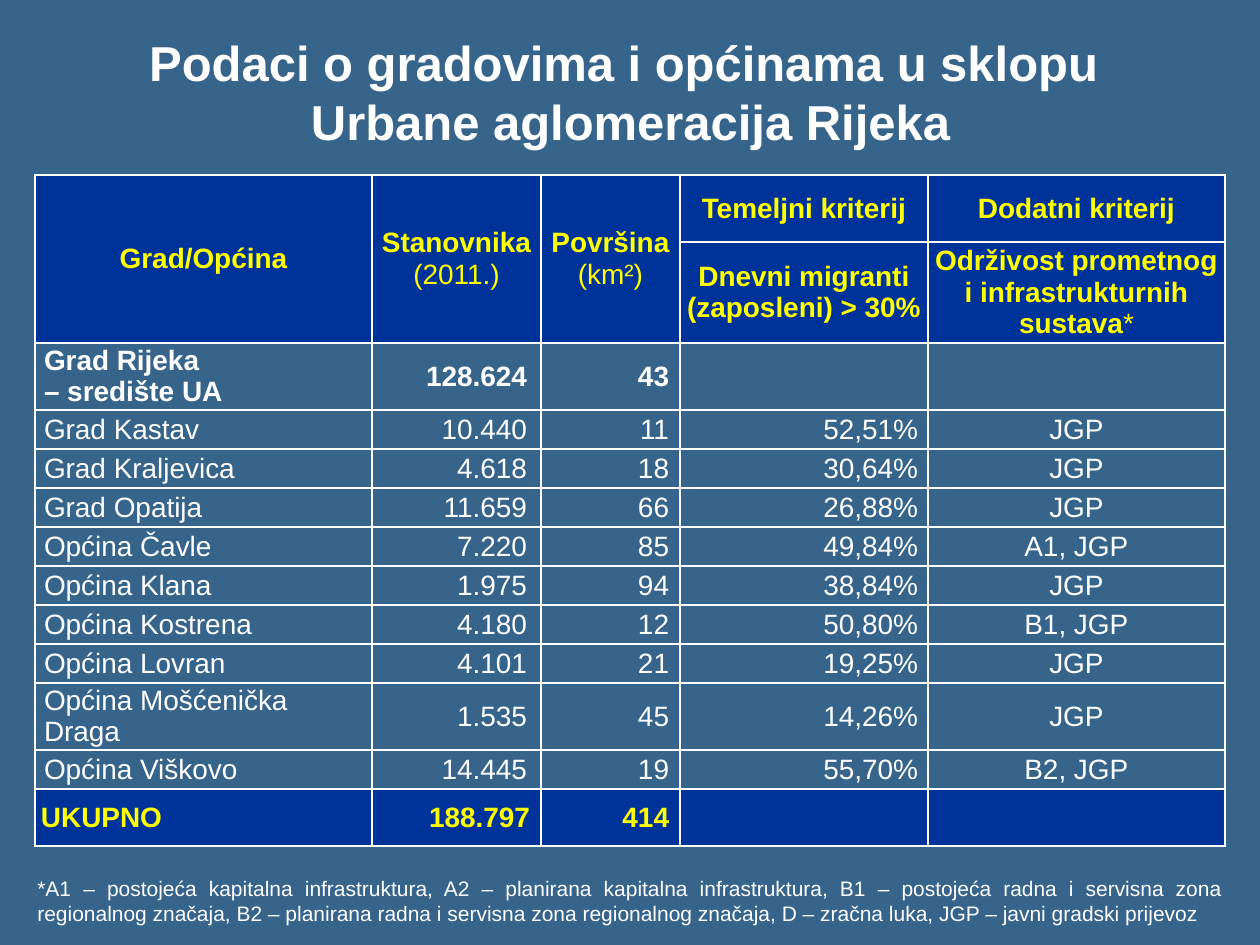
from lxml import etree
from pptx import Presentation
from pptx.dml.color import RGBColor
from pptx.enum.text import MSO_ANCHOR, MSO_AUTO_SIZE, PP_ALIGN
from pptx.oxml.ns import qn
from pptx.util import Pt

EMU_PER_PX = 914400 / 126
FONT = "Arial"
LEFT, CENTER, RIGHT = PP_ALIGN.LEFT, PP_ALIGN.CENTER, PP_ALIGN.RIGHT
JUSTIFY = PP_ALIGN.JUSTIFY
TOP, MIDDLE = MSO_ANCHOR.TOP, MSO_ANCHOR.MIDDLE
NO_AUTOFIT = MSO_AUTO_SIZE.NONE

SLATE = RGBColor(0x36, 0x64, 0x8B)
NAVY = RGBColor(0x00, 0x33, 0x99)
YELLOW = RGBColor(0xFF, 0xFF, 0x00)
WHITE = RGBColor(0xFF, 0xFF, 0xFF)

COLUMNS = [337, 169, 139, 248, 297]
ROWS = [67, 92] + [39] * 10 + [57]
ALIGNS = [LEFT, RIGHT, RIGHT, RIGHT, CENTER]
BODY_INSETS = [(9, 9), (5, 14), (5, 11), (0, 10), (5, 5)]
TOTAL_INSETS = [(6, 0), (5, 11), (5, 11), (0, 0), (0, 0)]

HEADERS = {
    (0, 0): [[("Grad/Općina", True)]],
    (0, 1): [[("Stanovnika", True)], [("(2011.)", False)]],
    (0, 2): [[("Površina", True)], [("(km²)", False)]],
    (0, 3): [[("Temeljni kriterij", True)]],
    (0, 4): [[("Dodatni kriterij", True)]],
    (1, 3): [[("Dnevni migranti (zaposleni) > 30%", True)]],
    (1, 4): [[("Održivost prometnog i infrastrukturnih sustava", True), ("*", False)]],
}
CENTRE_CITY = ("Grad Rijeka\n– središte UA", "128.624", "43", "", "")
MUNICIPALITIES = [
    ("Grad Kastav", "10.440", "11", "52,51%", "JGP"),
    ("Grad Kraljevica", "4.618", "18", "30,64%", "JGP"),
    ("Grad Opatija", "11.659", "66", "26,88%", "JGP"),
    ("Općina Čavle", "7.220", "85", "49,84%", "A1, JGP"),
    ("Općina Klana", "1.975", "94", "38,84%", "JGP"),
    ("Općina Kostrena", "4.180", "12", "50,80%", "B1, JGP"),
    ("Općina Lovran", "4.101", "21", "19,25%", "JGP"),
    ("Općina Mošćenička Draga", "1.535", "45", "14,26%", "JGP"),
    ("Općina Viškovo", "14.445", "19", "55,70%", "B2, JGP"),
]
TOTAL = ("UKUPNO", "188.797", "414", "", "")
TITLE = ["Podaci o gradovima i općinama u sklopu ", "Urbane aglomeracija Rijeka"]
FOOTNOTE = (
    "*A1 – postojeća kapitalna infrastruktura, A2 – planirana kapitalna infrastruktura, "
    "B1 – postojeća radna i servisna zona regionalnog značaja, B2 – planirana radna i "
    "servisna zona regionalnog značaja, D – zračna luka, JGP – javni gradski prijevoz"
)


def px(n):
    """Turn pixels into EMU."""
    return round(n * EMU_PER_PX)


def write(tf, paragraphs, size, color, align):
    """Write paragraphs, each a list of (text, bold) runs."""
    for i, runs in enumerate(paragraphs):
        p = tf.add_paragraph() if i else tf.paragraphs[0]
        p.alignment = align
        p.font.size = Pt(size)
        for text, bold in runs:
            for j, line in enumerate(text.split("\n")):
                if j:
                    p.add_line_break()
                r = p.add_run()
                r.text = line
                r.font.name = FONT
                r.font.size = Pt(size)
                r.font.bold = bold
                r.font.color.rgb = color


def add_title(s):
    """Fill the title placeholder."""
    sp = s.shapes.title
    sp.left, sp.top, sp.width, sp.height = map(px, (20, 26, 1221, 131))
    tf = sp.text_frame
    tf.word_wrap = True
    tf.auto_size = NO_AUTOFIT
    tf.vertical_anchor = TOP
    write(tf, [[(line, True)] for line in TITLE], 28, WHITE, CENTER)


def add_footnote(s):
    """Add the key to the abbreviations."""
    tf = s.shapes.add_textbox(*map(px, (25, 869, 1211, 63))).text_frame
    tf.word_wrap = True
    tf.vertical_anchor = MIDDLE
    write(tf, [[(FOOTNOTE, False)]], 12, WHITE, JUSTIFY)


def add_borders(cell):
    """Give a cell white lines on all four sides."""
    tcPr = cell._tc.get_or_add_tcPr()
    for side in ("a:lnL", "a:lnR", "a:lnT", "a:lnB"):
        ln = etree.SubElement(tcPr, qn(side), w=str(Pt(1)))
        fill = etree.SubElement(ln, qn("a:solidFill"))
        etree.SubElement(fill, qn("a:srgbClr"), val=str(WHITE))


def format_cell(cell, fill=None, insets=(0, 0)):
    """Set the borders, fill, side insets and anchor of a cell."""
    add_borders(cell)
    if fill is None:
        cell.fill.background()
    else:
        cell.fill.solid()
        cell.fill.fore_color.rgb = fill
    cell.margin_left, cell.margin_right = map(px, insets)
    cell.margin_top = cell.margin_bottom = 0
    cell.vertical_anchor = MIDDLE


def fill_row(table, row, values, insets, color=WHITE, bold=False, fill=None):
    """Write one row of data."""
    for col, value in enumerate(values):
        cell = table.cell(row, col)
        format_cell(cell, fill, insets[col])
        if value:
            write(cell.text_frame, [[(value, bold)]], 16, color, ALIGNS[col])


def add_data_table(s):
    """Add the table of towns and municipalities."""
    box = map(px, (35, 175, sum(COLUMNS), sum(ROWS)))
    table = s.shapes.add_table(len(ROWS), len(COLUMNS), *box).table
    table.first_row = table.horz_banding = False
    for column, width in zip(table.columns, COLUMNS):
        column.width = px(width)
    for row, height in zip(table.rows, ROWS):
        row.height = px(height)
    for col in range(3):
        table.cell(0, col).merge(table.cell(1, col))
    for row in range(2):
        for col in range(len(COLUMNS)):
            cell = table.cell(row, col)
            format_cell(cell, NAVY)
            if (row, col) in HEADERS:
                write(cell.text_frame, HEADERS[row, col], 16, YELLOW, CENTER)
    fill_row(table, 2, CENTRE_CITY, BODY_INSETS, bold=True)
    for row, values in enumerate(MUNICIPALITIES, 3):
        fill_row(table, row, values, BODY_INSETS)
    fill_row(table, len(ROWS) - 1, TOTAL, TOTAL_INSETS, YELLOW, True, NAVY)


def main():
    """Build the slide and save it."""
    prs = Presentation()
    prs.slide_width, prs.slide_height = px(1260), px(945)
    s = prs.slides.add_slide(prs.slide_layouts[5])
    s.background.fill.solid()
    s.background.fill.fore_color.rgb = SLATE
    add_footnote(s)
    add_title(s)
    add_data_table(s)
    prs.save("out.pptx")


if __name__ == "__main__":
    main()
